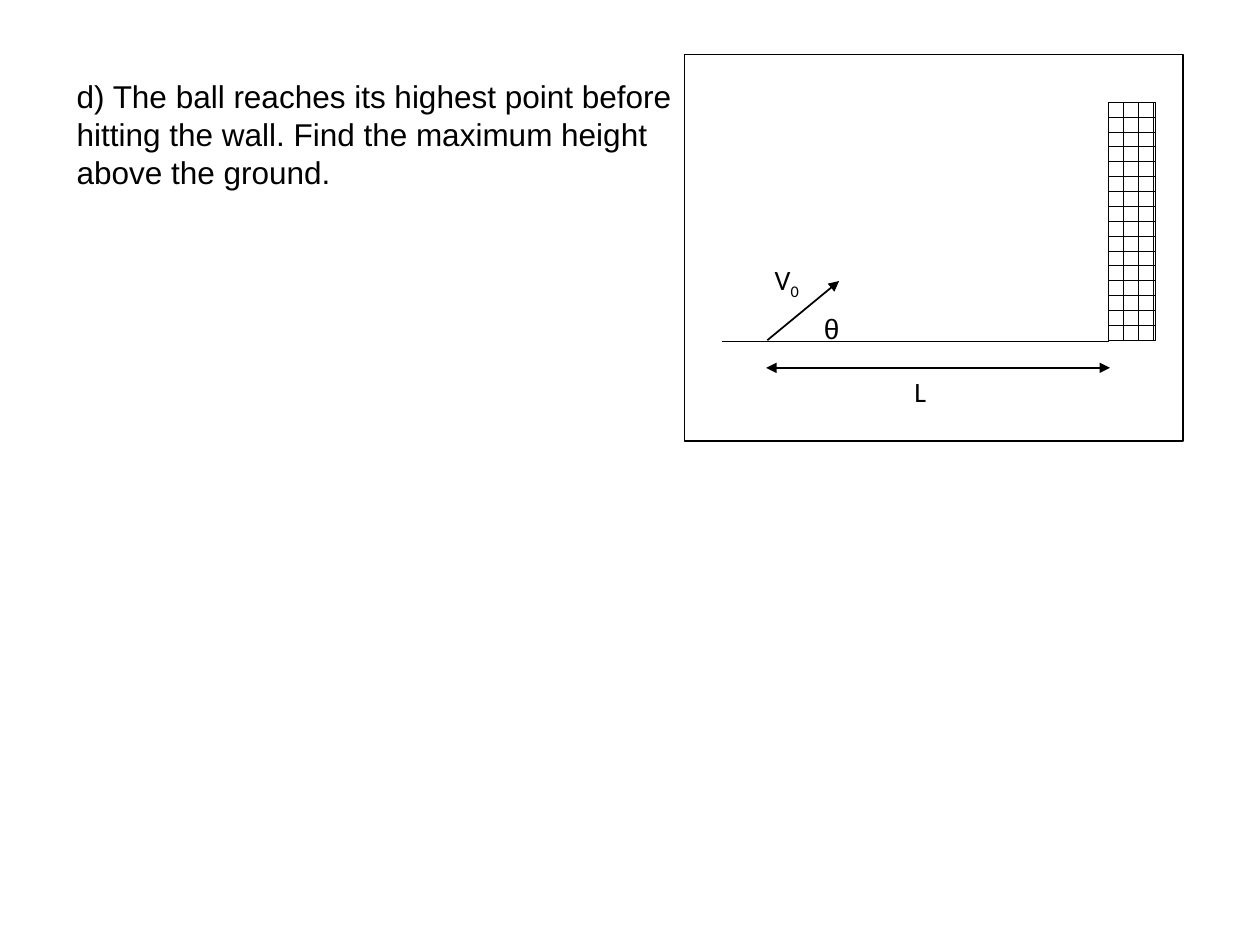
from dataclasses import dataclass

from lxml import etree
from pptx import Presentation
from pptx import util as u
from pptx.dml.color import RGBColor
from pptx.enum import dml, shapes, text
from pptx.oxml.ns import qn


@dataclass(frozen=True)
class Theme:
    ink: RGBColor = RGBColor(0, 0, 0)
    paper: RGBColor = RGBColor(255, 255, 255)
    body: str = "Arial"
    label: str = "Calibri"
    big: int = 18
    small: int = 16
    thin: float = 0.5
    edge: float = 0.75
    bold: float = 1


THEME = Theme()


def pts(*nums):
    return [u.Pt(n) for n in nums]


def stroke(line, width):
    line.color.rgb = THEME.ink
    line.width = u.Pt(width)


def add_box(slide, area, width):
    box = slide.shapes.add_shape(shapes.MSO_SHAPE.RECTANGLE, *pts(*area))
    box.shadow.inherit = False
    box.fill.background()
    stroke(box.line, width)
    return box


def add_wall(slide, area):
    fill = add_box(slide, area, THEME.thin).fill
    fill.patterned()
    fill.pattern = dml.MSO_PATTERN.HORIZONTAL_BRICK
    fill.fore_color.rgb = THEME.ink
    fill.back_color.rgb = THEME.paper


def add_line(slide, start, end, width, heads=()):
    """Draw a line; heads names the ends, headEnd or tailEnd, with a triangle."""
    line = slide.shapes.add_connector(
        shapes.MSO_CONNECTOR.STRAIGHT, *pts(*start, *end))
    stroke(line.line, width)
    for head in heads:
        etree.SubElement(line.line._get_or_add_ln(), qn("a:" + head),
                         type="triangle")
    etree.SubElement(line._element.spPr, qn("a:effectLst"))


def add_text(slide, area, words, font, size):
    box = slide.shapes.add_textbox(*pts(*area))
    frame = box.text_frame
    frame.word_wrap = True
    frame.text = words
    style(frame.paragraphs[0].runs[0], font, size)
    return frame


def style(run, font, size):
    run.font.name = font
    run.font.size = u.Pt(size)
    run.font.color.rgb = THEME.ink


def add_label(slide, area, words, font=THEME.label, sub=""):
    """Add a diagram label, with an optional subscript."""
    para = add_text(slide, area, words, font, THEME.small).paragraphs[0]
    para.line_spacing = 1.15
    para.space_after = u.Pt(10)
    if sub:
        run = para.add_run()
        run.text = sub
        style(run, font, THEME.small)
        run.font._element.set("baseline", "-25000")


def add_title(slide, area, words):
    frame = add_text(slide, area, words, THEME.body, THEME.big)
    frame.vertical_anchor = text.MSO_ANCHOR.MIDDLE


def main():
    deck = Presentation()
    deck.slide_width, deck.slide_height = pts(720, 540)
    slide = deck.slides.add_slide(deck.slide_layouts[6])

    add_box(slide, (391, 31, 285, 221), THEME.edge)
    add_line(slide, (437.8, 210.2), (634.3, 210.2), THEME.bold,
             ("headEnd", "tailEnd"))
    add_label(slide, (515.5, 207.4, 31, 27.4), "L")
    add_line(slide, (412.6, 195.1), (633.6, 195.1), THEME.thin)
    add_wall(slide, (633.6, 58.3, 26.6, 136.1))
    add_line(slide, (438.5, 194.4), (479.5, 160.6), THEME.bold, ("tailEnd",))
    add_label(slide, (435.6, 143.3, 46.8, 35.3), "V", sub="0")
    add_label(slide, (463.7, 171.4, 31, 27.4), "θ", THEME.body)
    add_title(slide, (36.7, 40.3, 360, 72.7),
              "d) The ball reaches its highest point before hitting the wall. "
              "Find the maximum height above the ground.")
    deck.save("out.pptx")


if __name__ == "__main__":
    main()
